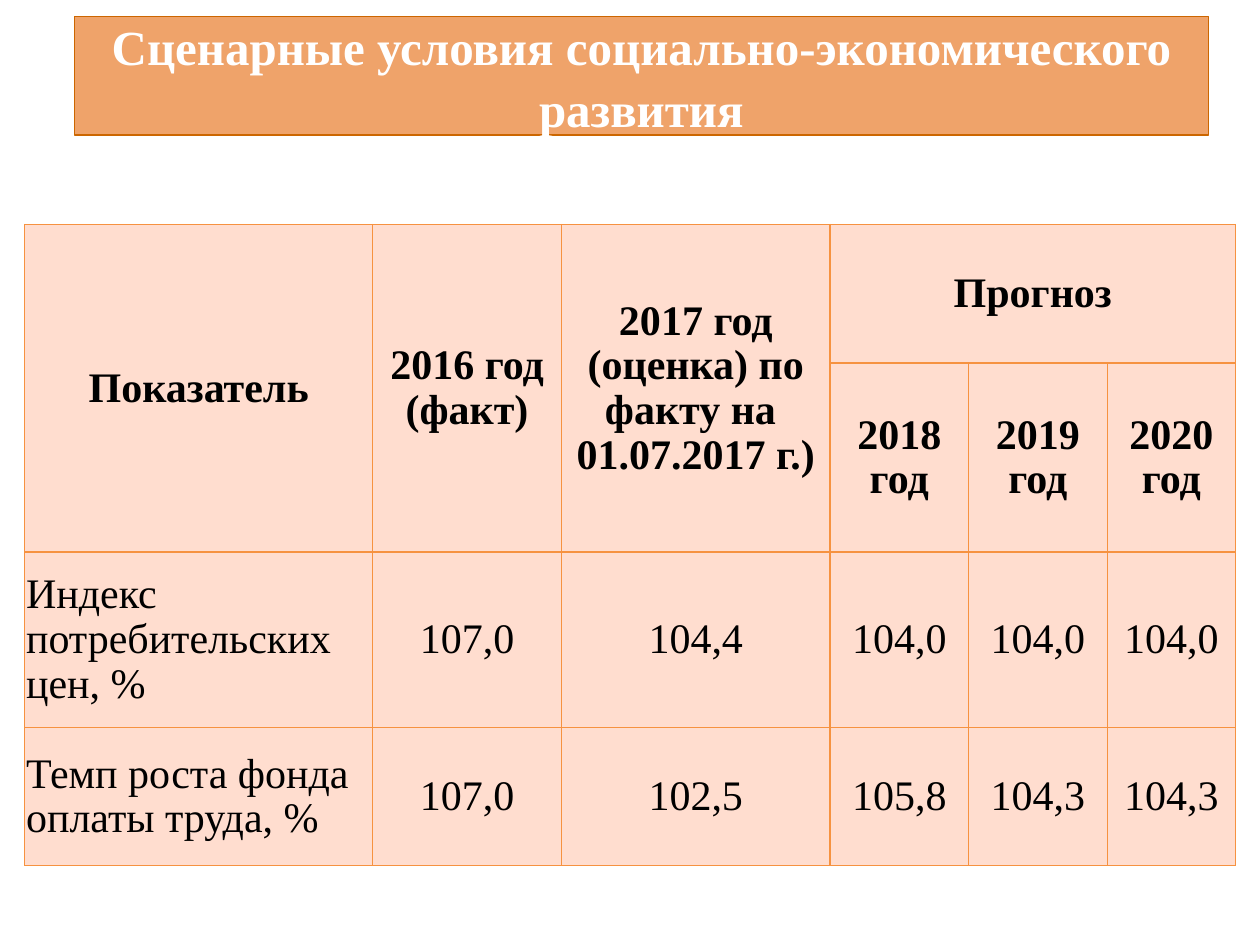
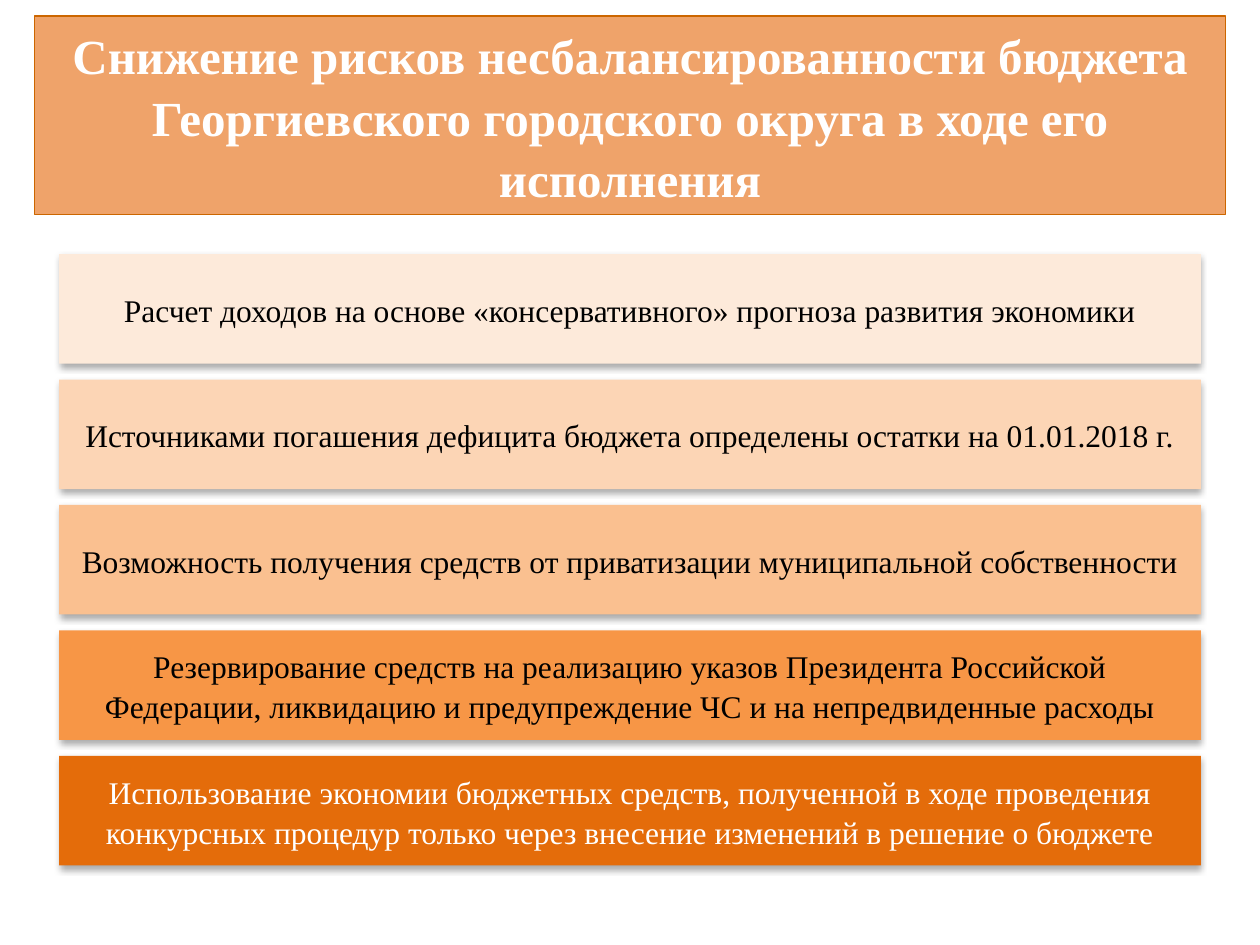
from dataclasses import dataclass

from lxml import etree
from pptx import Presentation
from pptx.dml.color import RGBColor
from pptx.enum.shapes import MSO_SHAPE
from pptx.enum.text import MSO_ANCHOR, MSO_AUTO_SIZE, PP_ALIGN
from pptx.oxml import parse_xml
from pptx.oxml.ns import nsdecls, qn
from pptx.util import Pt

RECTANGLE = MSO_SHAPE.RECTANGLE
MIDDLE = MSO_ANCHOR.MIDDLE
NO_AUTOFIT = MSO_AUTO_SIZE.NONE
CENTER, LEFT = PP_ALIGN.CENTER, PP_ALIGN.LEFT
TITLE_ONLY = 5


@dataclass(frozen=True)
class Theme:
    font: str = "Times New Roman"
    title_size: int = 28
    table_size: int = 24
    box_size: int = 18
    open_spacing: float = 1.05
    table_spacing: float = 0.96
    white: str = "FFFFFF"
    black: str = "000000"
    title_fill: str = "E97C2B"
    title_opacity: int = 70
    title_line: str = "CC6600"
    cell_fill: str = "FFDDCF"
    cell_border: str = "F69240"
    line_width: float = 0.75


THEME = Theme()

FORECAST_TITLE = "Сценарные условия социально-экономического развития"
FORECAST_TITLE_AREA = (42.5, 9.4, 648, 67.7)
TABLE_LEFT, TABLE_TOP = 14.2, 128.2
COLUMN_WIDTHS = [198.7, 108, 153.4, 79.2, 79.2, 73.4]
ROW_HEIGHTS = [79.2, 108, 100.1, 79.2]
HEADER_ROWS = 2
# Each cell is a list of paragraphs; None marks a cell covered by a merge.
TABLE_ROWS = [
    [["Показатель"], ["2016 год (факт)"],
     ["2017 год (оценка) по факту на ", "01.07.2017 г.)"], ["Прогноз"], None, None],
    [None, None, None, ["2018 год"], ["2019 год"], ["2020 год"]],
    [["Индекс потребительских цен, %"], ["107,0"], ["104,4"],
     ["104,0"], ["104,0"], ["104,0"]],
    [["Темп роста фонда оплаты труда, %"], ["107,0"], ["102,5"],
     ["105,8"], ["104,3"], ["104,3"]],
]
MERGES = [((0, column), (1, column)) for column in range(3)] + [((0, 3), (0, 5))]

RISK_TITLE = ("Снижение рисков несбалансированности бюджета "
              "Георгиевского городского округа в ходе его исполнения")
RISK_TITLE_AREA = (19.8, 9.2, 680.4, 113.2)
MEASURES = [
    ("Расчет доходов на основе «консервативного» прогноза развития экономики",
     "FDEADA", THEME.black),
    ("Источниками погашения дефицита бюджета определены остатки на 01.01.2018 г.",
     "FCD5B5", THEME.black),
    ("Возможность получения средств от приватизации муниципальной собственности",
     "FAC090", THEME.black),
    ("Резервирование средств на реализацию указов Президента Российской Федерации, "
     "ликвидацию и предупреждение ЧС и на непредвиденные расходы",
     "F79646", THEME.black),
    ("Использование экономии бюджетных средств, полученной в ходе проведения "
     "конкурсных процедур только через внесение изменений в решение о бюджете",
     "E46C0A", THEME.white),
]
BOX_LEFT, BOX_TOP, BOX_WIDTH, BOX_HEIGHT = 33.8, 145.2, 652.4, 62.6
BOX_PITCH = 71.7


def color(value):
    return RGBColor.from_string(value)


def write(frame, paragraphs, size, ink, spacing, bold=False, align=CENTER):
    frame.word_wrap = True
    for index, text in enumerate(paragraphs):
        para = frame.paragraphs[0] if index == 0 else frame.add_paragraph()
        para.alignment = align
        para.line_spacing = spacing
        para.space_before = para.space_after = Pt(0)
        span = para.add_run()
        span.text = text
        span.font.name = THEME.font
        span.font.size = Pt(size)
        span.font.bold = bold
        span.font.color.rgb = color(ink)


def add_page(deck, title_text, area):
    """Add a slide whose title is a translucent orange band."""
    page = deck.slides.add_slide(deck.slide_layouts[TITLE_ONLY])
    title = page.shapes.title
    title.left, title.top, title.width, title.height = map(Pt, area)
    title.fill.solid()
    title.fill.fore_color.rgb = color(THEME.title_fill)
    tint = title.fill._xPr.find(qn("a:solidFill"))[0]
    etree.SubElement(tint, qn("a:alpha"), val=str(THEME.title_opacity * 1000))
    title.line.color.rgb = color(THEME.title_line)
    title.line.width = Pt(THEME.line_width)
    frame = title.text_frame
    frame.auto_size = NO_AUTOFIT
    frame.vertical_anchor = MIDDLE
    write(frame, [title_text], THEME.title_size, THEME.white,
          THEME.open_spacing, bold=True)
    return page


def format_cell(cell):
    properties = cell._tc.get_or_add_tcPr()
    for side in ("lnL", "lnR", "lnT", "lnB"):
        properties.append(parse_xml(
            f'<a:{side} {nsdecls("a")} w="{Pt(THEME.line_width)}"><a:solidFill>'
            f'<a:srgbClr val="{THEME.cell_border}"/></a:solidFill></a:{side}>'))
    cell.fill.solid()
    cell.fill.fore_color.rgb = color(THEME.cell_fill)
    cell.vertical_anchor = MIDDLE
    cell.margin_left = cell.margin_right = cell.margin_top = Pt(0.7)
    cell.margin_bottom = Pt(0)


def add_forecast_table(page):
    table = page.shapes.add_table(
        len(ROW_HEIGHTS), len(COLUMN_WIDTHS), Pt(TABLE_LEFT), Pt(TABLE_TOP),
        Pt(sum(COLUMN_WIDTHS)), Pt(sum(ROW_HEIGHTS))).table
    table.first_row = table.horz_banding = False
    for column, width in zip(table.columns, COLUMN_WIDTHS):
        column.width = Pt(width)
    for row, height in zip(table.rows, ROW_HEIGHTS):
        row.height = Pt(height)
    for start, end in MERGES:
        table.cell(*start).merge(table.cell(*end))
    for row_index, row in enumerate(TABLE_ROWS):
        is_header = row_index < HEADER_ROWS
        for column_index, paragraphs in enumerate(row):
            cell = table.cell(row_index, column_index)
            format_cell(cell)
            if paragraphs:
                is_label = column_index == 0 and not is_header
                write(cell.text_frame, paragraphs, THEME.table_size, THEME.black,
                      THEME.table_spacing, is_header, LEFT if is_label else CENTER)


def add_soft_shadow(shape):
    shape.shadow.inherit = False
    effects = shape._element.spPr.find(qn("a:effectLst"))
    effects.append(parse_xml(
        f'<a:outerShdw {nsdecls("a")} blurRad="{Pt(3.5)}" dist="{Pt(2.2)}" '
        f'dir="5400000" rotWithShape="0"><a:srgbClr val="{THEME.black}">'
        '<a:alpha val="32000"/></a:srgbClr></a:outerShdw>'))


def add_measures(page):
    for index, (text, fill, ink) in enumerate(MEASURES):
        box = page.shapes.add_shape(
            RECTANGLE, Pt(BOX_LEFT), Pt(BOX_TOP + index * BOX_PITCH),
            Pt(BOX_WIDTH), Pt(BOX_HEIGHT))
        box.fill.solid()
        box.fill.fore_color.rgb = color(fill)
        box.line.fill.background()
        add_soft_shadow(box)
        box.text_frame.vertical_anchor = MIDDLE
        write(box.text_frame, [text], THEME.box_size, ink, THEME.open_spacing)


def main():
    deck = Presentation()
    deck.slide_width, deck.slide_height = Pt(720), Pt(540)
    add_forecast_table(add_page(deck, FORECAST_TITLE, FORECAST_TITLE_AREA))
    add_measures(add_page(deck, RISK_TITLE, RISK_TITLE_AREA))
    deck.save("out.pptx")


if __name__ == "__main__":
    main()
